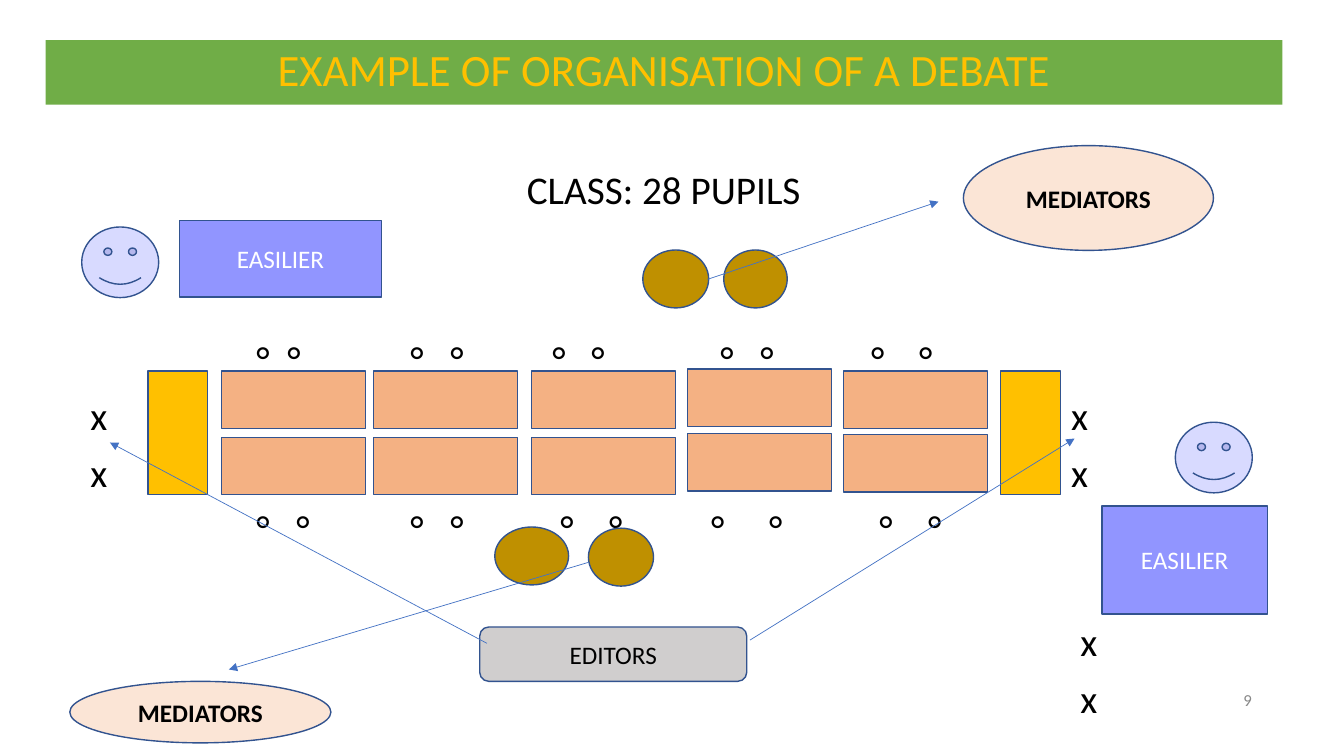
from lxml import etree
from pptx import Presentation
from pptx.dml.color import RGBColor
from pptx.enum import shapes, text
from pptx.oxml import ns
from pptx.util import Cm, Pt

GREEN = RGBColor(0x70, 0xAD, 0x47)
GOLD = RGBColor(0xFF, 0xC0, 0x00)
BROWN = RGBColor(0xBF, 0x90, 0x00)
PEACH = RGBColor(0xF4, 0xB1, 0x83)
CREAM = RGBColor(0xFB, 0xE5, 0xD6)
VIOLET = RGBColor(0x91, 0x95, 0xFF)
SILVER = RGBColor(0xD0, 0xCE, 0xCE)
GREY = RGBColor(0x88, 0x88, 0x88)
NAVY = RGBColor(0x32, 0x53, 0x8F)
BLUE = RGBColor(0x44, 0x72, 0xC4)
BLACK = RGBColor(0, 0, 0)
WHITE = RGBColor(0xFF, 0xFF, 0xFF)

Shape = shapes.MSO_SHAPE
Align = text.PP_ALIGN


def write(paragraph, words, size, color, align=Align.CENTER, bold=False):
    paragraph.alignment = align
    run = paragraph.add_run()
    run.text = words
    run.font.name = "Calibri"
    run.font.size = Pt(size)
    run.font.bold = bold
    run.font.color.rgb = color


def draw(kind, left, top, width, height, fill):
    figure = slide.shapes.add_shape(kind, Cm(left), Cm(top), Cm(width), Cm(height))
    figure.shadow.inherit = False
    figure.fill.solid()
    figure.fill.fore_color.rgb = fill
    figure.line.color.rgb = NAVY
    figure.line.width = Pt(1)
    return figure


prs = Presentation()
prs.slide_width, prs.slide_height = Cm(33.87), Cm(19.05)
slide = prs.slides.add_slide(prs.slide_layouts[1])

heading = slide.shapes.title
heading.left, heading.top, heading.width, heading.height = Cm(1.15), Cm(1.01), Cm(31.17), Cm(1.63)
heading.fill.solid()
heading.fill.fore_color.rgb = GREEN
heading_frame = heading.text_frame
heading_frame.margin_left = heading_frame.margin_right = 0
heading_frame.margin_top = heading_frame.margin_bottom = 0
heading_frame.vertical_anchor = text.MSO_ANCHOR.MIDDLE
heading_frame.auto_size = text.MSO_AUTO_SIZE.NONE
heading_frame.paragraphs[0].line_spacing = 0.9
write(heading_frame.paragraphs[0], "EXAMPLE OF ORGANISATION OF A DEBATE", 32, GOLD)

pupils = slide.placeholders[1]
pupils.left, pupils.top, pupils.width, pupils.height = Cm(1.14), Cm(2.64), Cm(31.17), Cm(16.08)
pupils_frame = pupils.text_frame
pupils_frame.auto_size = text.MSO_AUTO_SIZE.NONE
pupils_frame.vertical_anchor = text.MSO_ANCHOR.TOP
pupils_frame.margin_top = Cm(1.66)
pupils_count = pupils_frame.paragraphs[0]
pupils_count.line_spacing = 0.9
write(pupils_count, "CLASS: 28 PUPILS", 28, BLACK)
props = pupils_count._p.get_or_add_pPr()
props.set("marL", "0")
props.set("indent", "0")
etree.SubElement(props, ns.qn("a:buNone"))

seating = slide.shapes.add_textbox(Cm(1.14), Cm(8.45), Cm(31.17), Cm(10.27)).text_frame
seating.word_wrap = True
seating.margin_left = Cm(0.25)
seating.margin_top = Cm(0.13)

upper_seats = [6.63, 7.41, 10.51, 11.52, 14.09, 15.07, 18.32, 19.33, 22.12, 23.33]
lower_seats = [6.63, 7.64, 10.51, 11.52, 14.29, 15.52, 18.09, 19.55, 22.33, 23.56]
end_seats = [2.49, 27.21]
editor_seats = [27.44]
seat_rows = [
    ("°", upper_seats, 0),
    ("x", end_seats, 10),
    ("x", end_seats, 10),
    ("°", lower_seats, 10),
    ("x", editor_seats, 50.8),
    ("x", editor_seats, 10),
]
for number, (mark, seats, gap) in enumerate(seat_rows):
    row = seating.add_paragraph() if number else seating.paragraphs[0]
    row.line_spacing = 0.9
    row.space_before = Pt(gap)
    write(row, f"\t{mark}" * len(seats), 28, BLACK, Align.LEFT)
    stops = etree.SubElement(row._p.get_or_add_pPr(), ns.qn("a:tabLst"))
    for seat in seats:
        etree.SubElement(stops, ns.qn("a:tab"), pos=str(int(Cm(seat - 1.39))), algn="ctr")

desk_columns = [
    (5.59, 9.35, 11.02),
    (9.42, 9.35, 11.02),
    (13.39, 9.35, 11.02),
    (17.32, 9.3, 10.92),
    (21.26, 9.35, 10.95),
]
for left, *tops in desk_columns:
    for top in tops:
        draw(Shape.RECTANGLE, left, top, 3.63, 1.45, PEACH)

for left in (3.73, 25.22):
    draw(Shape.RECTANGLE, left, 9.35, 1.5, 3.12, GOLD)

for left, top, width in [(16.2, 6.3, 1.66), (18.24, 6.3, 1.6), (12.47, 13.28, 1.86), (14.83, 13.31, 1.64)]:
    draw(Shape.OVAL, left, top, width, 1.46, BROWN)

for left, top in [(2.06, 5.72), (29.62, 10.64)]:
    face = draw(Shape.SMILEY_FACE, left, top, 1.94, 1.78, VIOLET)
    tint = face._element.spPr.find(ns.qn("a:solidFill"))[0]
    etree.SubElement(tint, ns.qn("a:alpha"), val="35000")

roles = [
    ("EDITORS", Shape.ROUNDED_RECTANGLE, 12.09, 15.8, 6.73, 1.37, SILVER, BLACK, False),
    ("EASILIER", Shape.RECTANGLE, 4.53, 5.56, 5.08, 1.93, VIOLET, WHITE, False),
    ("EASILIER", Shape.RECTANGLE, 27.77, 12.75, 4.17, 2.72, VIOLET, WHITE, False),
    ("MEDIATORS", Shape.OVAL, 24.28, 3.67, 6.3, 2.64, CREAM, BLACK, True),
    ("MEDIATORS", Shape.OVAL, 1.76, 17.17, 6.58, 1.55, CREAM, BLACK, True),
]
for role, kind, left, top, width, height, fill, ink, bold in roles:
    label = draw(kind, left, top, width, height, fill).text_frame
    label.margin_top = label.margin_bottom = 0
    label.vertical_anchor = text.MSO_ANCHOR.MIDDLE
    write(label.paragraphs[0], role, 18, ink, bold=bold)

arrows = [
    (18.9, 16.13, 27.08, 11.05),
    (12.27, 16.21, 2.77, 11.15),
    (17.83, 7.04, 23.65, 5.08),
    (14.83, 14.17, 5.77, 16.87),
]
for ends in arrows:
    arrow = slide.shapes.add_connector(shapes.MSO_CONNECTOR.STRAIGHT, *map(Cm, ends))
    arrow.line.color.rgb = BLUE
    arrow.line.width = Pt(0.5)
    etree.SubElement(arrow.line._get_or_add_ln(), ns.qn("a:tailEnd"), type="triangle")
    etree.SubElement(arrow._element.spPr, ns.qn("a:effectLst"))

page = slide.shapes.add_textbox(Cm(23.93), Cm(17.27), Cm(7.62), Cm(0.74)).text_frame
page.word_wrap = True
page.margin_left = page.margin_right = page.margin_top = page.margin_bottom = 0
page.vertical_anchor = text.MSO_ANCHOR.MIDDLE
write(page.paragraphs[0], "9", 12, GREY, Align.RIGHT)

prs.save("out.pptx")
